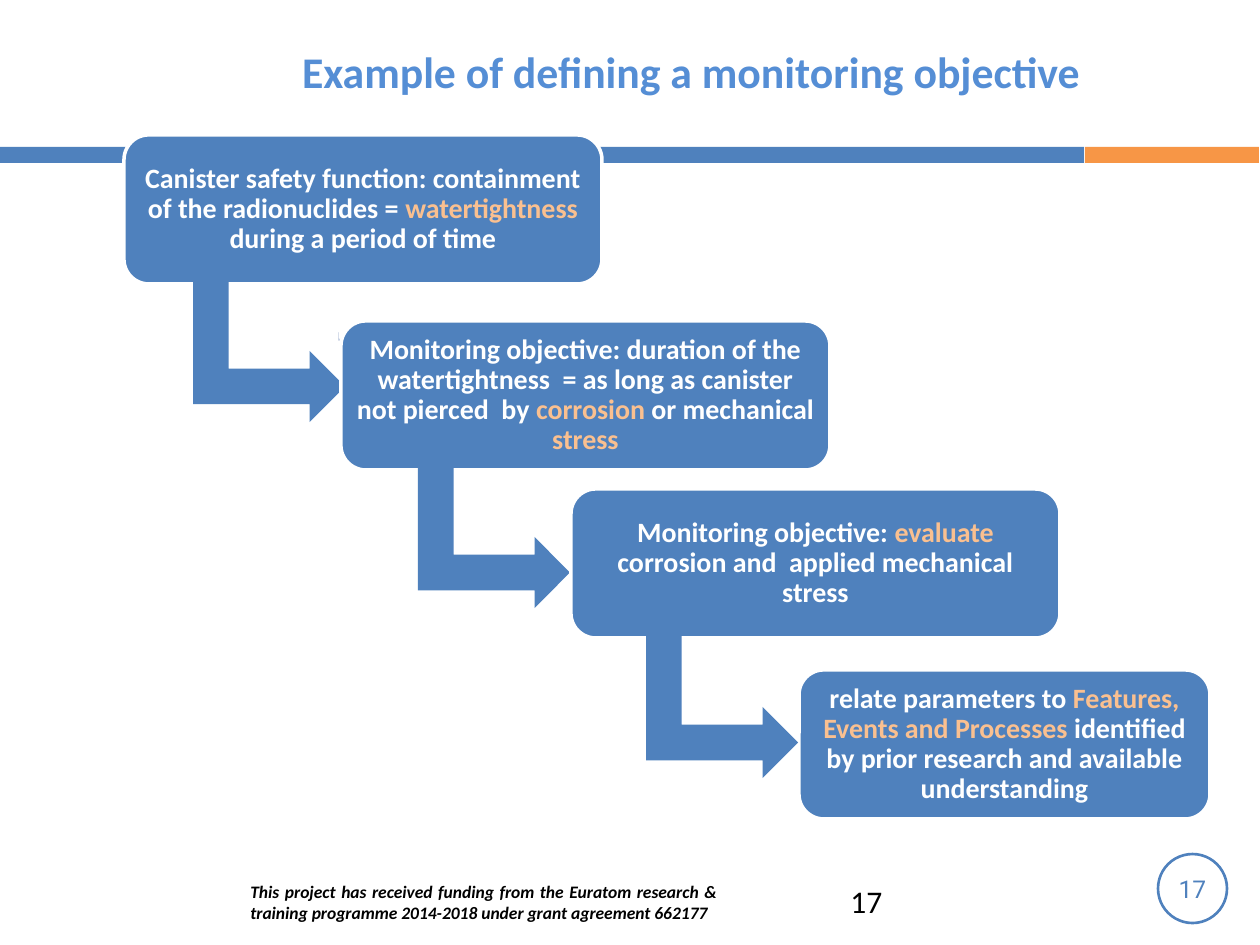
from pptx import Presentation
from pptx import util as u
from pptx.dml.color import RGBColor
from pptx.enum import shapes, text

WHITE = RGBColor(0xFF, 0xFF, 0xFF)
BLACK = RGBColor(0x00, 0x00, 0x00)
BLUE = RGBColor(0x4F, 0x81, 0xBD)
TITLE_BLUE = RGBColor(0x55, 0x8E, 0xD5)
ORANGE = RGBColor(0xF7, 0x96, 0x46)
PEACH = RGBColor(0xFA, 0xC0, 0x90)
PALE = RGBColor(0xC2, 0xCD, 0xE1)
SHAPE = shapes.MSO_SHAPE
ALIGN = text.PP_ALIGN
ANCHOR = text.MSO_ANCHOR
BOX_H = 149


def px(n):
    return u.Emu(round(n * 914400 / 126))


def write(tf, runs, size=16, color=WHITE, font="Calibri", bold=False, italic=False,
          align=ALIGN.CENTER, anchor=ANCHOR.MIDDLE, inset=None, spacing=None):
    tf.word_wrap = True
    tf.vertical_anchor = anchor
    if inset is not None:
        tf.margin_left = tf.margin_top = tf.margin_right = tf.margin_bottom = px(inset)
    p = tf.paragraphs[0]
    p.alignment = align
    if spacing:
        p.line_spacing = spacing
    for words, tint in runs:
        r = p.add_run()
        r.text = words
        f = r.font
        f.name, f.size, f.bold, f.italic = font, u.Pt(size), bold, italic
        f.color.rgb = tint or color


class Deck:
    """Draws the elements of a slide in one shared style."""

    def __init__(self, width, height):
        self.prs = Presentation()
        self.prs.slide_width, self.prs.slide_height = px(width), px(height)
        self.s = self.prs.slides.add_slide(self.prs.slide_layouts[6])

    def shape(self, kind, x, y, w, h, fill=None, line=None, weight=2):
        sp = self.s.shapes.add_shape(kind, px(x), px(y), px(w), px(h))
        sp.shadow.inherit = False
        if fill is None:
            sp.fill.background()
        else:
            sp.fill.solid()
            sp.fill.fore_color.rgb = fill
        if line is None:
            sp.line.fill.background()
        else:
            sp.line.color.rgb = line
            sp.line.width = u.Pt(weight)
        return sp

    def label(self, x, y, w, h, words, **style):
        sp = self.s.shapes.add_textbox(px(x), px(y), px(w), px(h))
        write(sp.text_frame, [(words, None)], **style)

    def box(self, x, y, w, runs):
        sp = self.shape(SHAPE.ROUNDED_RECTANGLE, x, y, w, BOX_H, BLUE, WHITE)
        write(sp.text_frame, runs, bold=True, inset=7, spacing=0.9)

    def arrow(self, x, y, w=142, h=152, fill=BLUE, line=None, adjust=()):
        sp = self.shape(SHAPE.BENT_UP_ARROW, x, y, w, h, fill, line)
        sp.rotation = 90
        for i, value in enumerate(adjust):
            sp.adjustments[i] = value

    def badge(self, x, y, size, words):
        sp = self.shape(SHAPE.OVAL, x, y, size, size, line=BLUE, weight=1.5)
        write(sp.text_frame, [(words, None)], size=14, color=BLUE, font="Roboto", inset=1)


def main():
    d = Deck(1260, 945)
    d.shape(SHAPE.RECTANGLE, 1085, 147, 174, 16, ORANGE)
    d.shape(SHAPE.RECTANGLE, -2, 147, 1086, 16, BLUE)
    d.badge(1158, 854, 69, "17")
    d.label(238, 874, 491, 55,
            "This project has received funding from the Euratom research & "
            "training programme 2014-2018 under grant agreement 662177",
            size=10, color=BLACK, bold=True, italic=True, align=ALIGN.JUSTIFY)
    d.label(124, 37, 1134, 67, "Example of defining a monitoring objective",
            size=25, color=TITLE_BLUE, bold=True)
    d.label(838, 876, 294, 50, "17", size=18, color=BLACK, align=ALIGN.LEFT,
            anchor=ANCHOR.TOP)

    d.box(799, 670, 411, [
        ("relate parameters to ", None),
        ("Features, Events and Processes ", PEACH),
        ("identified by prior research and available understanding", None)])
    d.box(124, 135, 478, [
        ("Canister safety function: containment of the radionuclides = ", None),
        ("watertightness ", PEACH),
        ("during a period of time", None)])
    d.arrow(198, 275)
    d.arrow(338, 329, 13, 16, PALE, WHITE, (0.328, 0.25, 0.358))
    d.box(341, 321, 489, [
        ("Monitoring objective: duration of the watertightness  = as long as "
         "canister not pierced  by ", None),
        ("corrosion ", PEACH),
        ("or mechanical ", None),
        ("stress", PEACH)])
    d.arrow(423, 461)
    d.box(571, 489, 489, [
        ("Monitoring objective: ", None),
        ("evaluate ", PEACH),
        ("corrosion and  applied mechanical stress", None)])
    d.arrow(651, 631)
    d.prs.save("out.pptx")


if __name__ == "__main__":
    main()
